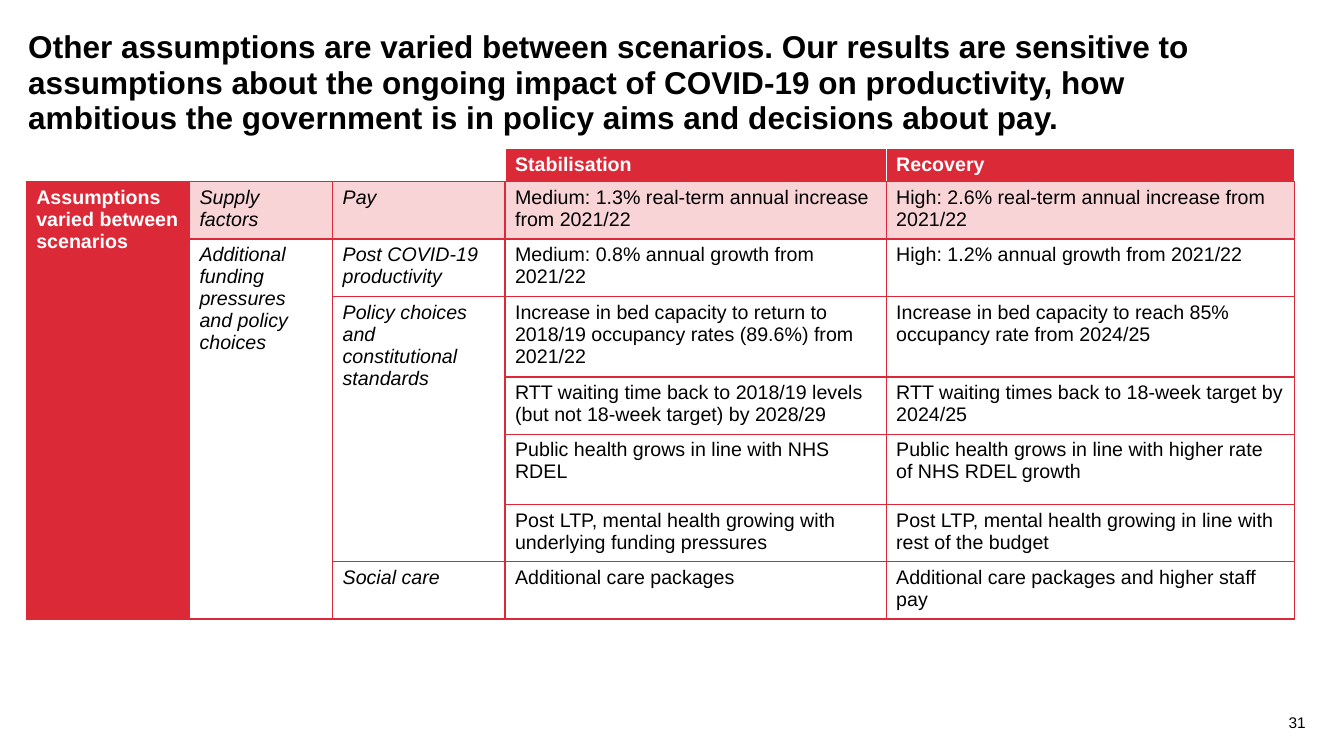
from lxml import etree
from pptx import Presentation
from pptx.dml.color import RGBColor
from pptx.enum.text import MSO_ANCHOR, PP_ALIGN
from pptx.oxml.ns import qn
from pptx.util import Inches, Pt

TOP = MSO_ANCHOR.TOP
LEFT, RIGHT = PP_ALIGN.LEFT, PP_ALIGN.RIGHT
COLORS = {"red": "DC2937", "pink": "F8D4D7", "white": "FFFFFF", "black": "000000"}


def write(box, text, size, color, bold=False, italic=False, align=LEFT):
    box.text = text
    para = box.paragraphs[0]
    para.alignment = align
    para.font.name = "Arial"
    para.font.size = Pt(size)
    para.font.bold = bold
    para.font.italic = italic
    para.font.color.rgb = RGBColor.from_string(COLORS[color])
    return para


def set_borders(cell, sides):
    properties = cell._tc.get_or_add_tcPr()
    for position, (side, color) in enumerate(sides.items()):
        line = etree.Element(qn(f"a:ln{side}"), w=str(Pt(1)))
        fill = etree.SubElement(line, qn("a:solidFill"))
        etree.SubElement(fill, qn("a:srgbClr"), val=COLORS[color])
        properties.insert(position, line)


deck = Presentation()
deck.slide_width, deck.slide_height = Inches(13.33), Inches(7.5)
page = deck.slides.add_slide(deck.slide_layouts[5])

title = page.shapes.title
title.left, title.top = Inches(0.28), Inches(0.3)
title.width, title.height = Inches(12.14), Inches(0.67)
number = page.shapes.add_textbox(Inches(12.56), Inches(7.07), Inches(0.39), Inches(0.2))
for shape in (title, number):
    box = shape.text_frame
    box.margin_left = box.margin_right = box.margin_top = box.margin_bottom = 0
    box.word_wrap = True
    box.vertical_anchor = TOP

heading = write(
    title.text_frame,
    "Other assumptions are varied between scenarios. Our results are sensitive to "
    "assumptions about the ongoing impact of COVID-19 on productivity, how "
    "ambitious the government is in policy aims and decisions about pay.",
    22.5, "black", bold=True)
heading.line_spacing = 0.94
write(number.text_frame, "31", 11, "black", align=RIGHT)

column_widths = [1.38, 0.14, 1.42, 1.71, 3.78, 4.05]
row_heights = [0.28, 0.5, 0.48, 0.67, 0.48, 0.7, 0.48, 0.48]
rows = [
    ["", "", "", "", "Stabilisation", "Recovery"],
    ["Assumptions varied between scenarios", "", "Supply factors", "Pay",
     "Medium: 1.3% real-term annual increase from 2021/22",
     "High: 2.6% real-term annual increase from 2021/22"],
    ["", "", "Additional funding pressures and policy choices", "Post COVID-19 productivity",
     "Medium: 0.8% annual growth from 2021/22",
     "High: 1.2% annual growth from 2021/22"],
    ["", "", "", "Policy choices and constitutional standards",
     "Increase in bed capacity to return to 2018/19 occupancy rates (89.6%) from 2021/22",
     "Increase in bed capacity to reach 85% occupancy rate from 2024/25"],
    ["", "", "", "", "RTT waiting time back to 2018/19 levels (but not 18-week target) by 2028/29",
     "RTT waiting times back to 18-week target by 2024/25"],
    ["", "", "", "", "Public health grows in line with NHS RDEL",
     "Public health grows in line with higher rate of NHS RDEL growth"],
    ["", "", "", "", "Post LTP, mental health growing with underlying funding pressures",
     "Post LTP, mental health growing in line with rest of the budget"],
    ["", "", "", "Social care", "Additional care packages",
     "Additional care packages and higher staff pay"],
]

table = page.shapes.add_table(
    len(rows), len(column_widths), Inches(0.26), Inches(1.47),
    Inches(sum(column_widths)), Inches(sum(row_heights))).table
table.first_row = table.horz_banding = False
for column, width in zip(table.columns, column_widths):
    column.width = Inches(width)
for row, height in zip(table.rows, row_heights):
    row.height = Inches(height)

header_sides = {"L": "white", "R": "white", "T": "white", "B": "red"}
body_sides = dict.fromkeys("LRTB", "red")
for row_index, texts in enumerate(rows):
    for column_index, text in enumerate(texts):
        cell = table.cell(row_index, column_index)
        is_header = row_index == 0
        is_label = column_index < 2
        is_red = column_index > 3 if is_header else is_label
        if is_red:
            fill = "red"
        else:
            fill = "pink" if row_index == 1 else "white"
        cell.fill.solid()
        cell.fill.fore_color.rgb = RGBColor.from_string(COLORS[fill])
        set_borders(cell, header_sides if is_header else body_sides)
        write(cell.text_frame, text, 14, "white" if is_red else "black",
              bold=is_red, italic=not is_header and column_index in (2, 3))

for first, last in [((0, 1), (0, 2)), ((1, 0), (7, 1)), ((2, 2), (7, 2)), ((3, 3), (6, 3))]:
    table.cell(*first).merge(table.cell(*last))

deck.save("out.pptx")
